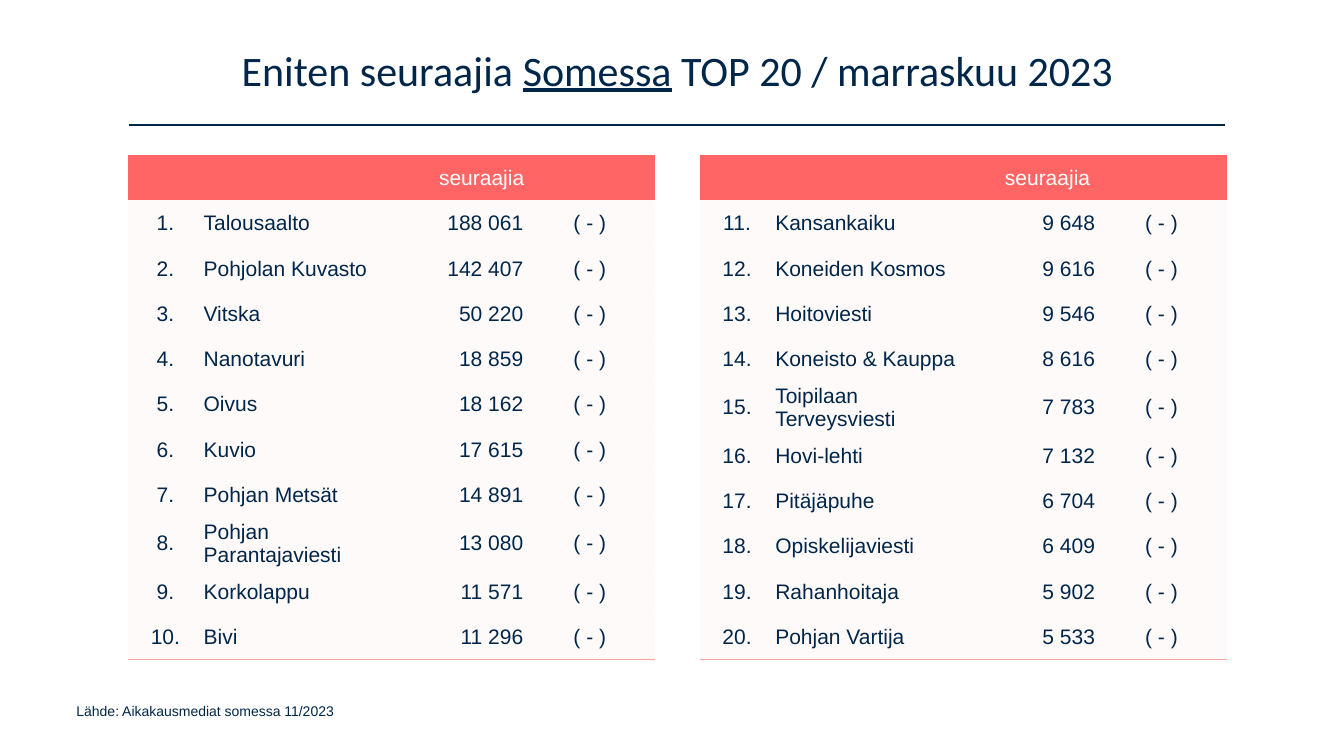
from lxml import etree
from pptx import Presentation
from pptx.dml.color import RGBColor
from pptx.enum.shapes import MSO_CONNECTOR
from pptx.enum.text import MSO_ANCHOR, PP_ALIGN
from pptx.oxml.ns import qn
from pptx.util import Inches, Pt

LEFT, CENTER, RIGHT = PP_ALIGN.LEFT, PP_ALIGN.CENTER, PP_ALIGN.RIGHT
MIDDLE = MSO_ANCHOR.MIDDLE
STRAIGHT = MSO_CONNECTOR.STRAIGHT

COLORS = {
    "navy": "002649",
    "white": "FFFFFF",
    "header": "FF6565",
    "body": "FFE0E0",
    "border": "FFA2A2",
}
NO_GRID_STYLE = "{2D5ABB26-0587-4C30-8999-92F81FD0307C}"
BODY_OPACITY = 15
COL_WIDTHS = (0.74, 1.99, 1.2, 1.3)
COL_ALIGNS = (CENTER, LEFT, RIGHT, CENTER)
TABLE_HEIGHT = 4.94
NO_CHANGE = "( - )"

TOP_TEN = [
    ("Talousaalto", "188 061"),
    ("Pohjolan Kuvasto", "142 407"),
    ("Vitska", "50 220"),
    ("Nanotavuri", "18 859"),
    ("Oivus", "18 162"),
    ("Kuvio", "17 615"),
    ("Pohjan Metsät", "14 891"),
    ("Pohjan Parantajaviesti", "13 080"),
    ("Korkolappu", "11 571"),
    ("Bivi", "11 296"),
]
NEXT_TEN = [
    ("Kansankaiku", "9 648"),
    ("Koneiden Kosmos", "9 616"),
    ("Hoitoviesti", "9 546"),
    ("Koneisto & Kauppa", "8 616"),
    ("Toipilaan Terveysviesti", "7 783"),
    ("Hovi-lehti", "7 132"),
    ("Pitäjäpuhe", "6 704"),
    ("Opiskelijaviesti", "6 409"),
    ("Rahanhoitaja", "5 902"),
    ("Pohjan Vartija", "5 533"),
]


def rgb(name):
    return RGBColor.from_string(COLORS[name])


def add_run(p, text, size, font="Arial", color="navy", underline=None):
    r = p.add_run()
    r.text = text
    r.font.size = Pt(size)
    r.font.name = font
    r.font.color.rgb = rgb(color)
    r.font.underline = underline


def add_text_frame(slide, left, top, width, height):
    box = slide.shapes.add_textbox(
        Inches(left), Inches(top), Inches(width), Inches(height))
    tf = box.text_frame
    tf.word_wrap = True
    return tf


def add_title(slide, left, top, width, height):
    tf = add_text_frame(slide, left, top, width, height)
    tf.vertical_anchor = MIDDLE
    p = tf.paragraphs[0]
    p.alignment = CENTER
    p.line_spacing = 0.9
    add_run(p, "Eniten seuraajia ", 30, "Calibri")
    add_run(p, "Somessa", 30, "Calibri", underline=True)
    add_run(p, " TOP 20 / marraskuu 2023", 30, "Calibri")


def add_rule(slide, left, top, width):
    line = slide.shapes.add_connector(
        STRAIGHT, Inches(left), Inches(top), Inches(left + width), Inches(top))
    line.line.color.rgb = rgb("navy")
    line.line.width = Pt(1)
    etree.SubElement(line._element.spPr, qn("a:effectLst"))


def add_source(slide, left, top, width, height):
    tf = add_text_frame(slide, left, top, width, height)
    add_run(tf.paragraphs[0], "Lähde: Aikakausmediat somessa 11/2023", 10)


def fill_cell(cell, color, opacity=100):
    cell.fill.solid()
    cell.fill.fore_color.rgb = rgb(color)
    if opacity < 100:
        clr = cell._tc.tcPr.find(".//" + qn("a:srgbClr"))
        etree.SubElement(clr, qn("a:alpha"), val=str(opacity * 1000))


def add_bottom_border(cell):
    ln = etree.Element(qn("a:lnB"), w=str(Pt(0.25)))
    fill = etree.SubElement(ln, qn("a:solidFill"))
    etree.SubElement(fill, qn("a:srgbClr"), val=COLORS["border"])
    cell._tc.tcPr.insert(0, ln)


def write_cell(cell, text, align, color, margin):
    cell.vertical_anchor = MIDDLE
    cell.margin_left = cell.margin_right = cell.margin_top = Inches(margin)
    cell.margin_bottom = 0
    p = cell.text_frame.paragraphs[0]
    p.alignment = align
    add_run(p, text, 15, color=color)


def add_ranking(slide, left, top, first_rank, entries, heading):
    """Place a four-column ranking: rank, magazine, followers, change."""
    n_rows = len(entries) + 1
    frame = slide.shapes.add_table(
        n_rows, len(COL_WIDTHS), Inches(left), Inches(top),
        Inches(sum(COL_WIDTHS)), Inches(TABLE_HEIGHT))
    table = frame.table
    table.horz_banding = False
    table._tbl.tblPr.find(qn("a:tableStyleId")).text = NO_GRID_STYLE
    for col, width in zip(table.columns, COL_WIDTHS):
        col.width = Inches(width)

    for cell in table.rows[0].cells:
        fill_cell(cell, "header")
    table.cell(0, 0).merge(table.cell(0, 1))
    write_cell(table.cell(0, 2), heading, RIGHT, "white", 0)

    for i, (magazine, followers) in enumerate(entries, 1):
        values = (f"{first_rank + i - 1}.", magazine, followers, NO_CHANGE)
        for j, (text, align) in enumerate(zip(values, COL_ALIGNS)):
            cell = table.cell(i, j)
            write_cell(cell, text, align, "navy", 0.01)
            fill_cell(cell, "body", BODY_OPACITY)
            if i == len(entries):
                add_bottom_border(cell)


def main():
    prs = Presentation()
    prs.slide_width, prs.slide_height = Inches(13.33), Inches(7.5)
    slide = prs.slides.add_slide(prs.slide_layouts[6])
    add_source(slide, 0.66, 6.92, 6.58, 0.44)
    add_rule(slide, 1.28, 1.24, 10.87)
    add_title(slide, 0.92, 0.21, 11.6, 1.02)
    add_ranking(slide, 1.27, 1.54, 1, TOP_TEN, "seuraajia")
    add_ranking(slide, 6.94, 1.54, 11, NEXT_TEN, "seuraajia ")
    prs.save("out.pptx")


if __name__ == "__main__":
    main()
